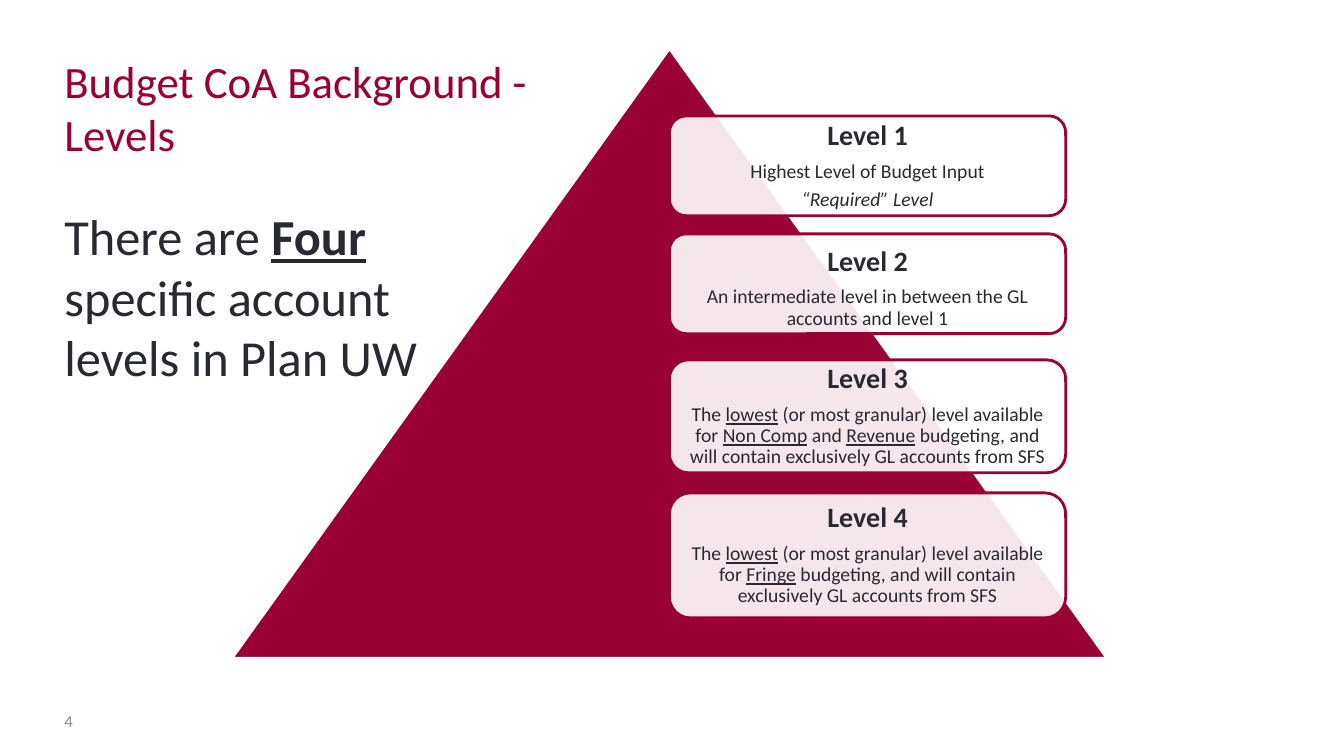
from dataclasses import dataclass

from lxml import etree
from pptx import Presentation
from pptx import util as u
from pptx.dml.color import RGBColor
from pptx.enum import shapes, text
from pptx.oxml import ns

PX = 9144


@dataclass(frozen=True)
class Theme:
    face: str = "Calibri"
    wine: str = "990033"
    ink: str = "292934"
    gray: str = "8E8E90"
    white: str = "FFFFFF"
    title: int = 32
    lead: int = 36
    head: int = 20
    body: int = 14
    small: int = 12
    line: int = 2


def put(target, values):
    for name, value in values.items():
        setattr(target, name, value)


class Deck:
    def __init__(self, theme):
        self.theme = theme
        self.file = Presentation()
        put(self.file, {"slide_width": 1333 * PX, "slide_height": 750 * PX})
        self.slide = self.file.slides.add_slide(self.file.slide_layouts[6])

    def shape(self, kind, area, fill, line, alpha=None):
        item = self.slide.shapes.add_shape(kind, *(n * PX for n in area))
        item.shadow.inherit = False
        item.fill.solid()
        item.fill.fore_color.rgb = RGBColor.from_string(fill)
        item.line.color.rgb = RGBColor.from_string(line)
        item.line.width = u.Pt(self.theme.line)
        if alpha:
            color = item.fill._xPr.find(".//" + ns.qn("a:srgbClr"))
            etree.SubElement(color, ns.qn("a:alpha"), val=str(alpha * 1000))

    def text(self, area, paras, color, frame=None, para=None):
        box = self.slide.shapes.add_textbox(*(n * PX for n in area)).text_frame
        put(box, {"word_wrap": True, **(frame or {})})
        for i, (size, runs) in enumerate(paras):
            row = box.add_paragraph() if i else box.paragraphs[0]
            put(row, para or {})
            if para:
                row.space_after = u.Pt(round(size * 0.35))
            for words, marks in runs:
                run = row.add_run()
                run.text = words
                put(run.font, {"name": self.theme.face, "size": u.Pt(size), **marks})
                run.font.color.rgb = RGBColor.from_string(color)

    def level(self, top, high, pad, anchor, head, lines):
        look = self.theme
        left, wide = 664, 393
        self.shape(shapes.MSO_SHAPE.ROUNDED_RECTANGLE, (left, top, wide, high),
                   look.white, look.wine, 90)
        sides = ("left", "top", "right", "bottom")
        frame = {f"margin_{side}": 8 * PX for side in sides}
        self.text((left + pad, top + pad, wide - 2 * pad, high - 2 * pad),
                  [(look.head, [(head, BOLD)])] + [(look.body, runs) for runs in lines],
                  look.ink, {**frame, "vertical_anchor": anchor},
                  {"alignment": text.PP_ALIGN.CENTER, "line_spacing": 0.9})


PLAIN = {}
BOLD = {"bold": True}
SLANT = {"italic": True}
UNDER = {"underline": True}
TOP, MID = text.MSO_ANCHOR.TOP, text.MSO_ANCHOR.MIDDLE
START = [("The ", PLAIN), ("lowest", UNDER),
         (" (or most granular) level available for ", PLAIN)]
CLOSE = "contain exclusively GL accounts from SFS"
LEVELS = [
    (115, 99, 5, MID, [[("Highest Level of Budget Input", PLAIN)],
                       [("“Required” Level", SLANT)]]),
    (232, 99, 5, TOP, [[("An intermediate level in between the GL accounts and level 1", PLAIN)]]),
    (357, 112, 6, MID, [START + [("Non Comp", UNDER), (" and ", PLAIN), ("Revenue", UNDER),
                                 (" budgeting, and will " + CLOSE, PLAIN)]]),
    (489, 124, 6, MID, [START + [("Fringe", UNDER),
                                 (" budgeting, and will " + CLOSE, PLAIN)]]),
]


def main():
    look = Theme()
    deck = Deck(look)
    deck.shape(shapes.MSO_SHAPE.ISOSCELES_TRIANGLE, (230, 48, 868, 605), look.wine, look.white)
    for i, (top, high, pad, anchor, lines) in enumerate(LEVELS, 1):
        deck.level(top, high, pad, anchor, f"Level {i}", lines)
    deck.text((54, 695, 56, 40), [(look.small, [("4", PLAIN)])], look.gray,
              {"vertical_anchor": MID})
    deck.text((54, 48, 498, 118),
              [(look.title, [("Budget CoA Background - Levels", PLAIN)])], look.wine)
    deck.text((54, 199, 381, 192),
              [(look.lead, [("There are ", PLAIN), ("Four", {**BOLD, **UNDER}),
                            (" specific account levels in Plan UW", PLAIN)])], look.ink)
    deck.file.save("out.pptx")


if __name__ == "__main__":
    main()
